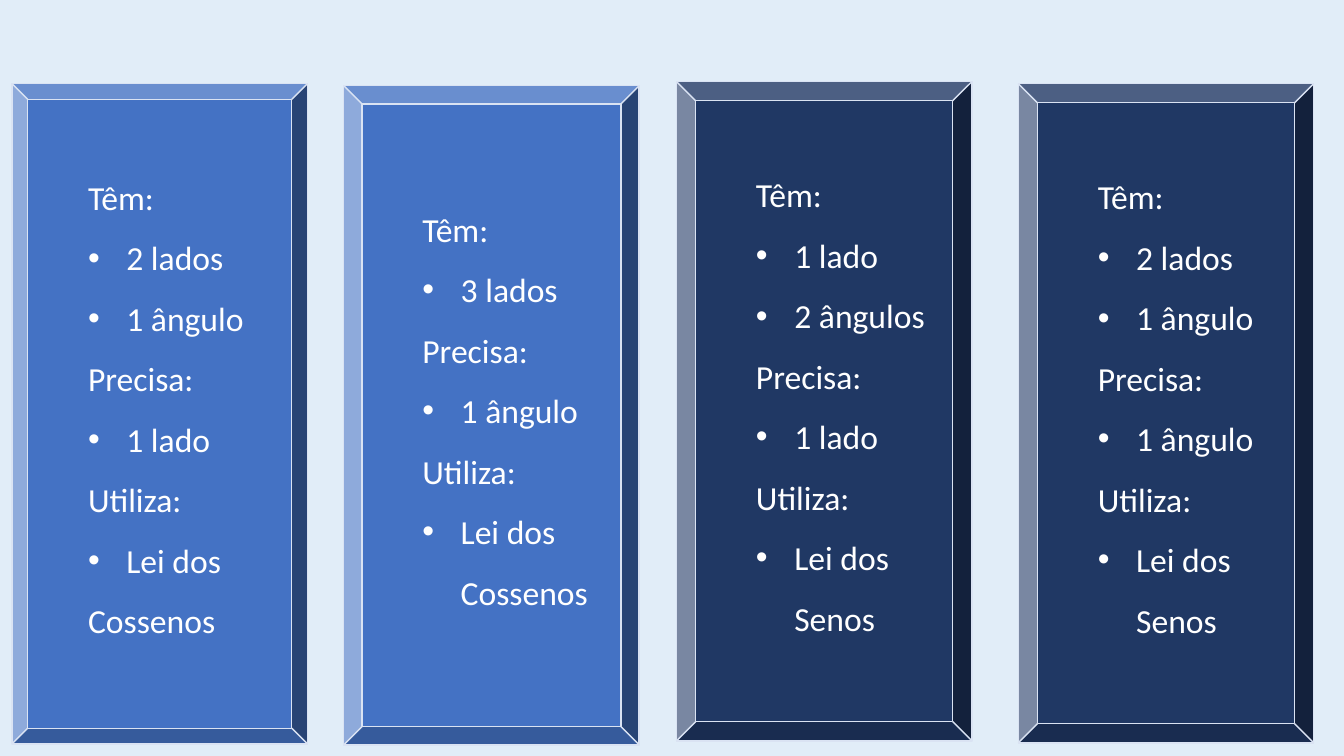
from dataclasses import dataclass

from lxml.etree import SubElement
from pptx import Presentation
from pptx.dml.color import RGBColor
from pptx.enum.shapes import MSO_SHAPE as Shape
from pptx.enum.text import MSO_ANCHOR as Anchor, PP_ALIGN as Align
from pptx.oxml.ns import qn
from pptx.slide import Slide
from pptx.util import Inches, Pt

COLORS = {
    "background": "E1EDF8",
    "cosines": "4472C4",
    "sines": "203864",
    "edge": "DAE3F3",
    "text": "FFFFFF",
}
FONT = "Calibri"
PANEL_WIDTH = 2.93
TEXT_INDENT = 0.5
BULLET_INDENT = 0.38


@dataclass(frozen=True)
class Panel:
    left: float
    top: float
    height: float
    bevel: float
    color: str
    given: tuple[str, ...]
    needed: str
    law: tuple[str, ...]
    closing: str = ""


PANELS = (
    Panel(0.12, 0.83, 6.55, 0.053, "cosines",
          ("2 lados", "1 ângulo"), "1 lado", ("Lei dos",), "Cossenos"),
    Panel(3.41, 0.85, 6.54, 0.062, "cosines",
          ("3 lados",), "1 ângulo", ("Lei dos Cossenos",)),
    Panel(6.71, 0.81, 6.54, 0.065, "sines",
          ("1 lado", "2 ângulos"), "1 lado", ("Lei dos Senos",)),
    Panel(10.1, 0.83, 6.54, 0.065, "sines",
          ("2 lados", "1 ângulo"), "1 ângulo", ("Lei dos Senos",)),
)


def rgb(name: str) -> RGBColor:
    return RGBColor.from_string(COLORS[name])


def panel_lines(panel: Panel) -> list[tuple[str, bool]]:
    """Return each line of the panel with whether it has a bullet."""
    lines = []
    sections = (("Têm:", panel.given), ("Precisa:", (panel.needed,)),
                ("Utiliza:", panel.law))
    for heading, items in sections:
        lines.append((heading, False))
        lines.extend((item, True) for item in items)
    if panel.closing:
        lines.append((panel.closing, False))
    return lines


def format_paragraph(para, bulleted: bool) -> None:
    para.level = 1
    para.alignment = Align.LEFT
    para.line_spacing = 1.5
    hanging = BULLET_INDENT if bulleted else 0
    properties = para._p.get_or_add_pPr()
    properties.set("marL", str(Inches(TEXT_INDENT + hanging)))
    properties.set("indent", str(Inches(-hanging)))
    if bulleted:
        SubElement(properties, qn("a:buFont")).set("typeface", "Arial")
        SubElement(properties, qn("a:buChar")).set("char", "•")
    for span in para.runs:
        span.font.name = FONT
        span.font.size = Pt(24)
        span.font.color.rgb = rgb("text")


def draw_panel(page: Slide, panel: Panel) -> None:
    box = page.shapes.add_shape(
        Shape.BEVEL, Inches(panel.left), Inches(panel.top),
        Inches(PANEL_WIDTH), Inches(panel.height))
    box.adjustments[0] = panel.bevel
    box.shadow.inherit = False
    box.fill.solid()
    box.fill.fore_color.rgb = rgb(panel.color)
    box.line.color.rgb = rgb("edge")
    box.line.width = Pt(1)

    frame = box.text_frame
    frame.word_wrap = True
    frame.vertical_anchor = Anchor.MIDDLE
    frame.margin_bottom = Inches(0.35)
    lines = panel_lines(panel)
    frame.text = "\n".join(text for text, _ in lines)
    for para, (_, bulleted) in zip(frame.paragraphs, lines):
        format_paragraph(para, bulleted)


def main() -> None:
    deck = Presentation()
    deck.slide_width = Inches(13.33)
    deck.slide_height = Inches(7.5)
    page = deck.slides.add_slide(deck.slide_layouts[6])
    page.background.fill.solid()
    page.background.fill.fore_color.rgb = rgb("background")
    for panel in PANELS:
        draw_panel(page, panel)
    deck.save("out.pptx")


if __name__ == "__main__":
    main()
